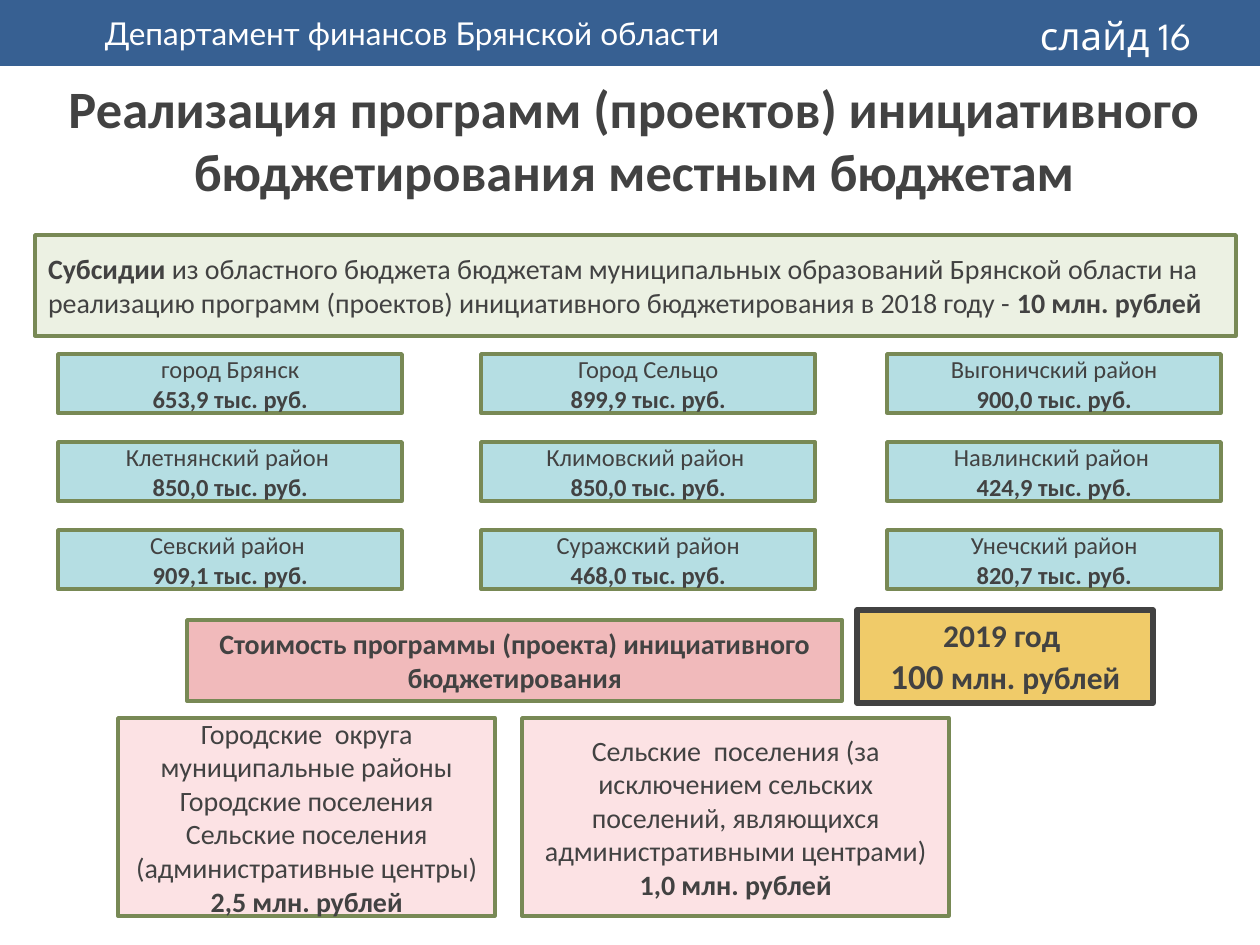
from pptx import Presentation
from pptx import util as u
from pptx.dml.color import RGBColor
from pptx.enum import shapes, text

PX = 914400 / 126
COLORS = {
    "header": "376092", "white": "FFFFFF", "ink": "424242", "edge": "788955",
    "green": "ECF1E3", "blue": "B5DEE3", "rose": "F1BABB", "pink": "FCE2E4",
    "gold": "F0CB69",
}


def rgb(name):
    return RGBColor.from_string(COLORS[name])


def add_text(box, paragraphs, fill=None, line=None, width=2, size=16,
             color="ink", font="Calibri", align="CENTER", anchor="MIDDLE", left=13):
    x, y, w, h = [round(v * PX) for v in box]
    if fill:
        sp = s.shapes.add_shape(shapes.MSO_SHAPE.RECTANGLE, x, y, w, h)
        sp.shadow.inherit = False
        sp.fill.solid()
        sp.fill.fore_color.rgb = rgb(fill)
        if line:
            sp.line.color.rgb = rgb(line)
            sp.line.width = u.Pt(width)
        else:
            sp.line.fill.background()
    else:
        sp = s.shapes.add_textbox(x, y, w, h)
    tf = sp.text_frame
    tf.word_wrap = True
    tf.margin_left = round(left * PX)
    tf.vertical_anchor = text.MSO_ANCHOR[anchor]
    for i, runs in enumerate(paragraphs):
        p = tf.add_paragraph() if i else tf.paragraphs[0]
        p.alignment = text.PP_ALIGN[align]
        for content, bold, *own_size in runs:
            r = p.add_run()
            r.text = content
            r.font.name = font
            r.font.size = u.Pt(own_size[0] if own_size else size)
            r.font.bold = bold
            r.font.color.rgb = rgb(color)


prs = Presentation()
prs.slide_width, prs.slide_height = u.Inches(10), u.Inches(7.5)
s = prs.slides.add_slide(prs.slide_layouts[6])

add_text((0, 0, 1260, 66), [[("Департамент финансов Брянской области", False)]],
         fill="header", size=18, color="white", font="Lato", align="LEFT", left=105)
add_text((1027, 6, 218, 59), [[("слайд 16", False)]], size=22, color="white",
         font="League Spartan", align="LEFT", anchor="TOP")
add_text((19, 66, 1230, 147),
         [[("Реализация программ (проектов) инициативного бюджетирования местным бюджетам", True)]],
         size=30)

add_text((35, 235, 1201, 101), [[
    ("Субсидии ", True),
    ("из областного бюджета бюджетам муниципальных образований Брянской области на "
     "реализацию программ (проектов) инициативного бюджетирования в 2018 году - ", False),
    ("10 млн. рублей", True),
]], fill="green", line="edge", align="LEFT")

columns = [(58, 344), (481, 334), (887, 334)]
grants = [
    [("город Брянск", "653,9"), ("Город Сельцо", "899,9"), ("Выгоничский район", "900,0")],
    [("Клетнянский район ", "850,0"), ("Климовский район ", "850,0"), ("Навлинский район ", "424,9")],
    [("Севский район ", "909,1"), ("Суражский район", "468,0"), ("Унечский район", "820,7")],
]
for i, row in enumerate(grants):
    for (x, w), (place, amount) in zip(columns, row):
        add_text((x, 354 + 88 * i, w, 59),
                 [[(place, False)], [(f"{amount} тыс. руб.", True)]],
                 fill="blue", line="edge", size=14)

add_text((187, 620, 655, 81),
         [[("Стоимость программы (проекта) инициативного бюджетирования", True)]],
         fill="rose", line="edge")
add_text((857, 610, 296, 93),
         [[("2019 год ", True)], [("100", True, 20), (" млн. рублей", True)]],
         fill="gold", line="ink", width=3, size=18, anchor="TOP")

add_text((118, 718, 377, 198), [
    [("Городские  округа муниципальные районы", False)],
    [("Городские поселения", False)],
    [("Сельские поселения (административные центры)", False)],
    [("2,5 млн. рублей", True)],
], fill="pink", line="edge")
add_text((522, 718, 427, 198), [
    [("Сельские  поселения (за исключением сельских поселений, "
      "являющихся административными центрами)", False)],
    [("1,0 млн. рублей", True)],
], fill="pink", line="edge")

prs.save("out.pptx")
